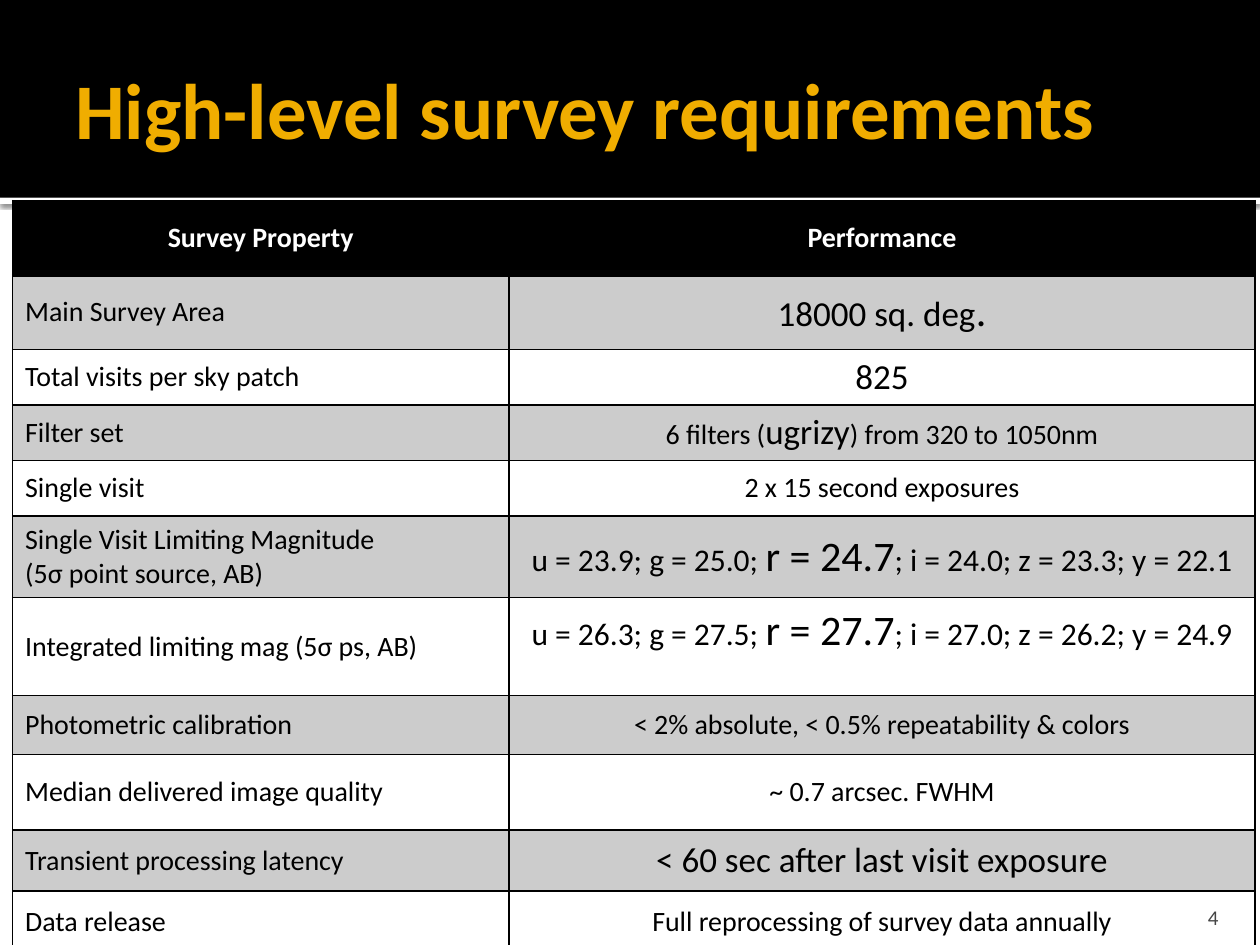
from lxml import etree
from pptx import Presentation
from pptx.dml.color import RGBColor
from pptx.enum import shapes, text
from pptx.oxml.ns import qn
from pptx.util import Pt

BLACK, WHITE = "000000", "FFFFFF"
LEFT, CENTER, RIGHT = text.PP_ALIGN.LEFT, text.PP_ALIGN.CENTER, text.PP_ALIGN.RIGHT
MIDDLE, BOTTOM = text.MSO_ANCHOR.MIDDLE, text.MSO_ANCHOR.BOTTOM


def rgb(value):
    return RGBColor.from_string(value)


def write(para, spans, align, color, bold=False):
    """Fill a paragraph with (wording, size) spans; a newline is a line break."""
    para.alignment = align
    for wording, size in spans:
        for number, line in enumerate(wording.split("\n")):
            if number:
                para.add_line_break()
            span = para.add_run()
            span.text = line
            span.font.color.rgb = rgb(color)
            for name, value in {"name": "Calibri", "size": Pt(size), "bold": bold}.items():
                setattr(span.font, name, value)


deck = Presentation()
deck.slide_width, deck.slide_height = Pt(720), Pt(540)
page = deck.slides.add_slide(deck.slide_layouts[6])

# Title band and the white rule beneath it
for top, height, color in [(113, 3.6, WHITE), (0, 113, BLACK)]:
    band = page.shapes.add_shape(shapes.MSO_SHAPE.RECTANGLE, 0, Pt(top), Pt(720), Pt(height))
    band.fill.solid()
    band.fill.fore_color.rgb = rgb(color)
    band.line.fill.background()
    band.shadow.inherit = False
    if color == WHITE:
        effects = band._element.spPr.find(qn("a:effectLst"))
        shadow = etree.SubElement(effects, qn("a:outerShdw"), blurRad=str(Pt(2.5)),
                                  dist=str(Pt(0.8)), dir="5400000", rotWithShape="0")
        tone = etree.SubElement(shadow, qn("a:srgbClr"), val=BLACK)
        etree.SubElement(tone, qn("a:alpha"), val="60000")

# Title and page number
labels = [
    ((36, 12.2, 648, 98.6), "High-level survey requirements", 45, "F0AD00", True, LEFT, MIDDLE, 3.6, 3.6),
    ((645.8, 509.8, 57.6, 21.6), "4", 12, "454545", False, RIGHT, BOTTOM, 7.2, 0),
]
for place, wording, size, color, bold, align, anchor, right, bottom in labels:
    box = page.shapes.add_textbox(*map(Pt, place))
    frame_format = {"word_wrap": True, "vertical_anchor": anchor, "margin_left": Pt(7.2),
                    "margin_top": Pt(3.6), "margin_right": Pt(right), "margin_bottom": Pt(bottom)}
    for name, value in frame_format.items():
        setattr(box.text_frame, name, value)
    write(box.text_frame.paragraphs[0], [(wording, size)], align, color, bold)

# Requirements: row height, property, performance spans
requirements = [
    (42.5, "Survey Property", [("Performance", 16)]),
    (42.5, "Main Survey Area", [("18000 sq. deg", 20), (".", 24)]),
    (31.7, "Total visits per sky patch", [("825", 20)]),
    (31.7, "Filter set", [("6 filters (", 16), ("ugrizy", 20), (") from 320 to 1050nm", 16)]),
    (31.7, "Single visit", [("2 x 15 second exposures", 16)]),
    (46.8, "Single Visit Limiting Magnitude\n(5σ point source, AB)",
     [("u = 23.9; g = 25.0; ", 18), ("r = 24.7", 24), ("; i = 24.0; z = 23.3; y = 22.1", 18)]),
    (56, "Integrated limiting mag (5σ ps, AB)",
     [("u = 26.3; g = 27.5; ", 18), ("r = 27.7", 24), ("; i = 27.0; z = 26.2; y = 24.9", 18)]),
    (33.5, "Photometric calibration", [("< 2% absolute, < 0.5% repeatability & colors", 16)]),
    (43.2, "Median delivered image quality", [("~ 0.7 arcsec. FWHM", 16)]),
    (35, "Transient processing latency", [("< 60 sec after last visit exposure", 20)]),
    (35, "Data release", [("Full reprocessing of survey data annually", 16)]),
]
total = sum(row[0] for row in requirements)
table = page.shapes.add_table(len(requirements), 2, Pt(7.2), Pt(114.7), Pt(710), Pt(total)).table
table.first_row = table.horz_banding = False
for column, width in zip(table.columns, (283.7, 426.3)):
    column.width = Pt(width)

for index, (height, label, performance) in enumerate(requirements):
    table.rows[index].height = Pt(height)
    header = index == 0
    for column, spans in enumerate([[(label, 16)], performance]):
        cell = table.cell(index, column)
        cell.vertical_anchor = MIDDLE
        write(cell.text_frame.paragraphs[0], spans, CENTER if header or column else LEFT,
              WHITE if header else BLACK, header)

        # Borders, heavier below the header
        properties = cell._tc.get_or_add_tcPr()
        for side in "LRTB":
            width = 2 if header and side == "B" else 1
            line = etree.SubElement(properties, qn("a:ln" + side), w=str(Pt(width)))
            etree.SubElement(etree.SubElement(line, qn("a:solidFill")), qn("a:srgbClr"), val=BLACK)

        # Black header, then every other row tinted
        if header or index % 2:
            cell.fill.solid()
            cell.fill.fore_color.rgb = rgb(BLACK)
            if not header:
                tint = properties.find(qn("a:solidFill")).find(qn("a:srgbClr"))
                etree.SubElement(tint, qn("a:alpha"), val="20000")
        else:
            cell.fill.background()

# The integrated magnitudes sit above the middle of their row
table.cell(6, 1).margin_bottom = Pt(21.6)

deck.save("out.pptx")
